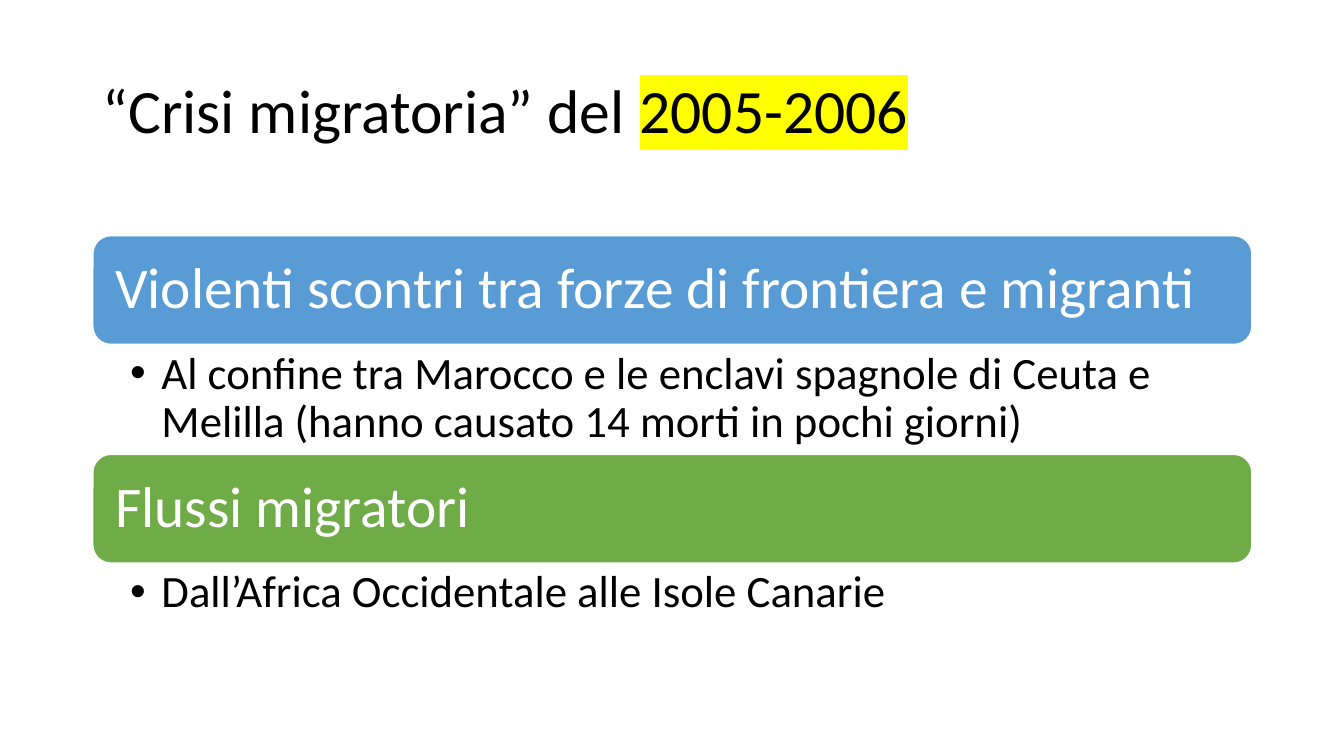
"""Builds a slide on the 2005-2006 migration crisis."""
from dataclasses import dataclass

from lxml.etree import SubElement
from pptx import Presentation
from pptx.dml.color import RGBColor as Color
from pptx.enum.shapes import MSO_SHAPE as Shape
from pptx.enum.text import MSO_ANCHOR as Anchor, PP_ALIGN as Align
from pptx.oxml.ns import qn
from pptx.util import Cm, Pt


@dataclass(frozen=True)
class Theme:
    font: str = "Calibri"
    title_size: int = 44
    heading_size: int = 41
    detail_size: int = 32
    dark: str = "000000"
    light: str = "FFFFFF"
    blue: str = "599BD5"
    green: str = "6FAB46"
    marker: str = "FFFF00"


def write_text(shape, *texts, font, size, color, anchor=Anchor.MIDDLE,
               insets=(0.25, 0.13, 0.25, 0.13), highlights=()):
    frame = shape.text_frame
    frame.word_wrap = True
    frame.vertical_anchor = anchor
    sides = ("left", "top", "right", "bottom")
    for side, inset in zip(sides, insets):
        setattr(frame, f"margin_{side}", Cm(inset))
    paragraph = frame.paragraphs[0]
    paragraph.alignment = Align.LEFT
    paragraph.line_spacing = 0.9
    for text in texts:
        run = paragraph.add_run()
        run.text = text
        run.font.name = font
        run.font.size = Pt(size)
        run.font.color.rgb = Color.from_string(color)
        if text in highlights:
            properties = run._r.get_or_add_rPr()
            highlight = SubElement(properties, qn("a:highlight"))
            SubElement(highlight, qn("a:srgbClr"), val=Theme.marker)
            properties.find(qn("a:solidFill")).addnext(highlight)
    return paragraph


class SlideBuilder:
    def __init__(self, slide, theme):
        self.slide = slide
        self.theme = theme
        self.left = Cm(2.34)
        self.width = Cm(29.21)

    def title(self, *texts, highlights):
        title = self.slide.shapes.title
        title.left, title.top = self.left, Cm(1.02)
        title.width, title.height = self.width, Cm(3.68)
        write_text(title, *texts, font=self.theme.font, size=self.theme.title_size,
                   color=self.theme.dark, highlights=highlights)

    def heading(self, text, top, height, fill):
        bar = self.slide.shapes.add_shape(
            Shape.ROUNDED_RECTANGLE, self.left, Cm(top), self.width, Cm(height))
        bar.shadow.inherit = False
        bar.fill.solid()
        bar.fill.fore_color.rgb = Color.from_string(fill)
        bar.line.color.rgb = Color.from_string(self.theme.light)
        bar.line.width = Pt(1)
        write_text(bar, text, font=self.theme.font, size=self.theme.heading_size,
                   color=self.theme.light, insets=(0.43,) * 4)

    def detail(self, text, top, height):
        box = self.slide.shapes.add_textbox(self.left, Cm(top), self.width, Cm(height))
        paragraph = write_text(
            box, text, font=self.theme.font, size=self.theme.detail_size,
            color=self.theme.dark, anchor=Anchor.TOP, insets=(0.94, 0.15, 0.81, 0.15))
        paragraph.level = 1
        properties = paragraph._p.get_or_add_pPr()
        indent = Cm(0.79)
        properties.set("marL", str(indent))
        properties.set("indent", str(-indent))
        SubElement(properties, qn("a:buFont"), typeface="Arial")
        SubElement(properties, qn("a:buChar"), char="•")


def main():
    presentation = Presentation()
    presentation.slide_width, presentation.slide_height = Cm(33.87), Cm(19.05)
    theme = Theme()
    slide = presentation.slides.add_slide(presentation.slide_layouts[5])
    builder = SlideBuilder(slide, theme)
    builder.title("“Crisi migratoria” del ", "2005-2006", highlights=("2005-2006",))

    sections = [
        ("Violenti scontri tra forze di frontiera e migranti", theme.blue,
         "Al confine tra Marocco e le enclavi spagnole di Ceuta e Melilla "
         "(hanno causato 14 morti in pochi giorni)", 2.77),
        ("Flussi migratori", theme.green,
         "Dall’Africa Occidentale alle Isole Canarie", 1.88),
    ]
    top, heading_height = 5.94, 2.74
    for heading, fill, detail, detail_height in sections:
        builder.heading(heading, top, heading_height, fill)
        top += heading_height
        builder.detail(detail, top, detail_height)
        top += detail_height
    presentation.save("out.pptx")


if __name__ == "__main__":
    main()
